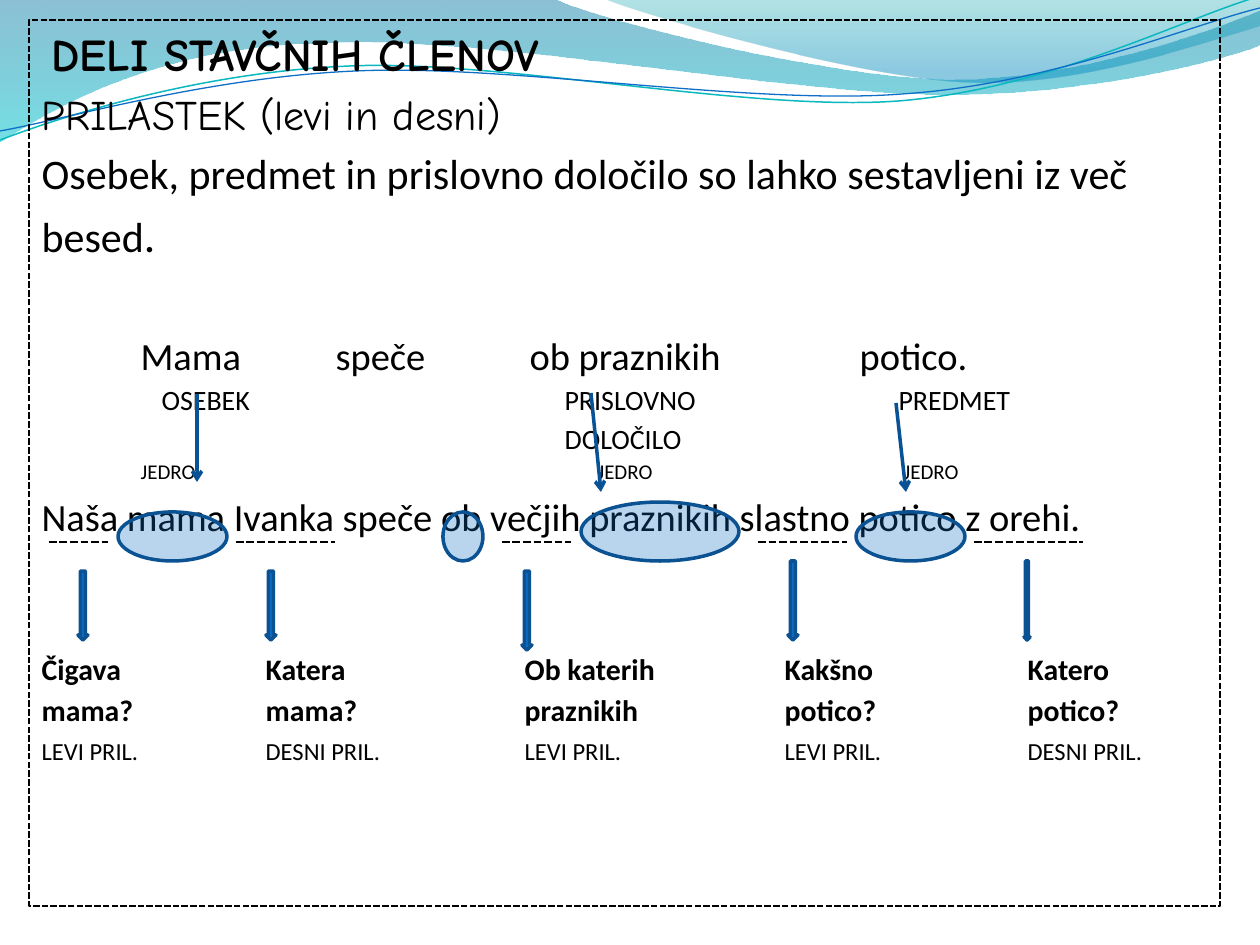
from lxml.etree import SubElement
from pptx import Presentation
from pptx.dml.color import RGBColor as RGB
from pptx.enum.dml import MSO_LINE_DASH_STYLE as DASH
from pptx.enum.shapes import MSO_CONNECTOR_TYPE as CONNECTOR
from pptx.enum.shapes import MSO_SHAPE as SHAPE
from pptx.enum.text import MSO_ANCHOR as ANCHOR
from pptx.enum.text import MSO_AUTO_SIZE as AUTOSIZE
from pptx.oxml.ns import qn
from pptx.util import Emu, Pt

PX_PER_INCH = 126
COLORS = {
    "ink": "000000", "blue": "0F6FC6", "outline": "0B5292", "arrow": "095295",
    "teal": "0AB8BF", "deep": "0074A1", "cyan": "00C6CF", "sea": "00A1A9", "sky": "008BBF",
}
TEXT_LEFT = 42
QUESTION_COLUMNS = (266, 525, 785, 1028)

FORMATS = {
    "lead": {"name": "Cambria", "size": Pt(26)},
    "heading": {"name": "Comic Neue", "size": Pt(26), "bold": True},
    "topic": {"name": "Comic Neue", "size": Pt(24)},
    "rule": {"name": "Calibri", "size": Pt(24)},
    "stop": {"name": "Calibri", "size": Pt(26)},
    "sentence": {"name": "Calibri", "size": Pt(22)},
    "member": {"name": "Calibri", "size": Pt(16)},
    "core": {"name": "Calibri", "size": Pt(12)},
    "question": {"name": "Calibri", "size": Pt(17), "bold": True},
    "answer": {"name": "Calibri", "size": Pt(14)},
}
# Space before in points, tab stops, then format and text of each run.
ROWS = [
    (0, (), ("lead", " "), ("heading", "DELI STAVČNIH ČLENOV")),
    (4.5, (), ("topic", "PRILASTEK (levi in desni)")),
    (5, (), ("rule", "Osebek, predmet in prislovno določilo so lahko sestavljeni iz več")),
    (5, (), ("rule", "besed"), ("stop", ".")),
    (40, (141, 336, 530, 860), ("sentence", "\tMama\tspeče\tob praznikih\tpotico.")),
    (3, (162, 565, 899), ("member", "\tOSEBEK\tPRISLOVNO\tPREDMET")),
    (3, (565,), ("member", "\tDOLOČILO")),
    (2, (141, 598, 904), ("core", "\tJEDRO\tJEDRO\tJEDRO")),
    (5, (), ("sentence", "Naša mama Ivanka speče ob večjih praznikih slastno potico z orehi.")),
    (64, QUESTION_COLUMNS, ("question", "Čigava\tKatera\tOb katerih\tKakšno\tKatero")),
    (3, QUESTION_COLUMNS, ("question", "mama?\tmama?\tpraznikih\tpotico?\tpotico?")),
    (4.5, QUESTION_COLUMNS,
     ("answer", "LEVI PRIL.\tDESNI PRIL.\tLEVI PRIL.\tLEVI PRIL.\tDESNI PRIL.")),
]

# A wave is a start point and segments: one point is a line, three a Bézier curve.
UPPER_BAND = [(0, 0), [(554, -1)],
              [(600, 21), (837, 79), (955, 79)], [(1075, 79), (1207, 33), (1260, 11)],
              [(1261, 45)], [(1239, 55), (1096, 96), (940, 94)],
              [(784, 94), (481, 35), (324, 43)], [(163, 45), (58, 105), (-1, 142)]]
RIGHT_BAND = [(604, -1), [(641, 15), (859, 78), (969, 82)],
              [(1079, 87), (1211, 40), (1260, 26)], [(1260, 0)]]
TEAL_STRAND = [(0, 140), [(60, 117), (199, 72), (349, 66)],
               [(498, 59), (747, 112), (898, 101)], [(1049, 89), (1182, 19), (1257, -3)]]
BLUE_STRAND = [(0, 131), [(59, 121), (207, 77), (357, 71)],
               [(508, 64), (752, 106), (903, 94)], [(1053, 84), (1187, 26), (1260, 8)]]

CORE_ARROWS = [((197, 394), (197, 482)), ((591, 393), (601, 492)), ((896, 403), (906, 492))]
CORE_OVALS = [(118, 512, 109, 49), (443, 512, 40, 49), (581, 502, 158, 59), (856, 512, 109, 49)]
UNDERLINES = [(49, 108), (236, 335), (502, 571), (758, 847), (974, 1083)]
QUESTION_ARROWS = [(78, 571, 10, 69), (266, 571, 10, 69), (522, 571, 10, 79),
                   (788, 561, 10, 79), (1024, 561, 6, 79)]


def px(length):
    return Emu(round(length * 914400 / PX_PER_INCH))


def rgb(color):
    return RGB.from_string(COLORS[color])


def set_values(target, values):
    for name, value in values.items():
        setattr(target, name, value)


def set_line(shape, color, width, dash=None):
    shape.line.color.rgb = rgb(color)
    set_values(shape.line, {"width": Pt(width), "dash_style": dash})


def set_alpha(shape, percents):
    """Give the fill colours of the shape, in order, their opacity."""
    for color, percent in zip(shape._element.spPr.iter(qn("a:srgbClr")), percents):
        SubElement(color, qn("a:alpha"), val=str(percent * 1000))


def add_wave(slide, wave, close):
    """Draw all points as lines, then join each three of a curve into one Bézier."""
    start, *segments = wave
    builder = slide.shapes.build_freeform(*map(px, start))
    builder.add_line_segments([(px(x), px(y)) for segment in segments for x, y in segment],
                              close=close)
    shape = builder.convert_to_shape()
    shape.shadow.inherit = False
    lines = iter(list(shape._element.spPr.iter(qn("a:lnTo"))))
    for segment in segments:
        first, *others = [next(lines) for _ in segment]
        if others:
            first.tag = qn("a:cubicBezTo")
        for line in others:
            first.append(line[0])
            line.getparent().remove(line)
    return shape


def add_band(slide, wave, stops):
    """Add a filled wave; a stop is a colour, a position and an opacity."""
    band = add_wave(slide, wave, True)
    band.line.fill.background()
    band.fill.gradient()
    band.fill.gradient_angle = 270
    for stop, (color, position, _) in zip(band.fill.gradient_stops, stops):
        stop.color.rgb = rgb(color)
        stop.position = position
    set_alpha(band, [opacity for *_, opacity in stops])


def add_strand(slide, wave, color, width):
    strand = add_wave(slide, wave, False)
    strand.fill.background()
    set_line(strand, color, width)


def clear_master_indent(deck):
    """Drop the hanging indent of body text, which would override tab stops."""
    body_style = next(deck.slide_master._element.iter(qn("p:bodyStyle")))
    level = body_style.find(qn("a:lvl1pPr"))
    for name in ("marL", "indent"):
        level.attrib.pop(name, None)
    bullet = level.find(qn("a:buChar"))
    level.replace(bullet, level.makeelement(qn("a:buNone")))


def add_row(paragraph, space, tabs, *runs):
    paragraph.space_before = Pt(space)
    for style, text in runs:
        run = paragraph.add_run()
        run.text = text
        set_values(run.font, FORMATS[style])
        run.font.color.rgb = rgb("ink")
    if tabs:
        tab_list = SubElement(paragraph._p.get_or_add_pPr(), qn("a:tabLst"))
        for tab in tabs:
            SubElement(tab_list, qn("a:tab"), pos=str(px(tab - TEXT_LEFT)), algn="l")


def fill_lesson(lesson):
    set_values(lesson, {"left": px(29), "top": px(20), "width": px(1191), "height": px(886)})
    set_line(lesson, "ink", 1.25, DASH.SQUARE_DOT)
    frame = lesson.text_frame
    set_values(frame, {"word_wrap": True, "auto_size": AUTOSIZE.NONE,
                       "vertical_anchor": ANCHOR.TOP})
    for number, row in enumerate(ROWS):
        add_row(frame.add_paragraph() if number else frame.paragraphs[0], *row)


def add_line(slide, start, end, color, width, dash=None, arrow=False):
    line = slide.shapes.add_connector(CONNECTOR.STRAIGHT, *map(px, start + end))
    set_line(line, color, width, dash)
    if arrow:
        SubElement(line.line._get_or_add_ln(), qn("a:tailEnd"), type="arrow")
    SubElement(line._element.spPr, qn("a:effectLst"))


def add_mark(slide, kind, box, opacity=100):
    mark = slide.shapes.add_shape(kind, *map(px, box))
    mark.shadow.inherit = False
    mark.fill.solid()
    mark.fill.fore_color.rgb = rgb("blue")
    if opacity < 100:
        set_alpha(mark, [opacity])
    set_line(mark, "outline", 2)


def main():
    deck = Presentation()
    set_values(deck, {"slide_width": px(1260), "slide_height": px(945)})
    clear_master_indent(deck)
    slide = deck.slides.add_slide(deck.slide_layouts[1])
    title, lesson = slide.placeholders
    title._element.getparent().remove(title._element)
    add_band(slide, UPPER_BAND, [("deep", 0, 45), ("cyan", 1, 55)])
    add_band(slide, RIGHT_BAND, [("sea", 0, 30), ("sky", 0.8, 45)])
    add_strand(slide, TEAL_STRAND, "teal", 0.85)
    add_strand(slide, BLUE_STRAND, "blue", 0.75)
    slide.shapes._spTree.append(lesson._element)  # text in front of the waves
    fill_lesson(lesson)
    for start, end in CORE_ARROWS:
        add_line(slide, start, end, "arrow", 2, arrow=True)
    for box in CORE_OVALS:
        add_mark(slide, SHAPE.OVAL, box, 29)
    for left, right in UNDERLINES:
        add_line(slide, (left, 542), (right, 542), "ink", 1.5, DASH.SQUARE_DOT)
    for box in QUESTION_ARROWS:
        add_mark(slide, SHAPE.DOWN_ARROW, box)
    deck.save("out.pptx")


if __name__ == "__main__":
    main()
